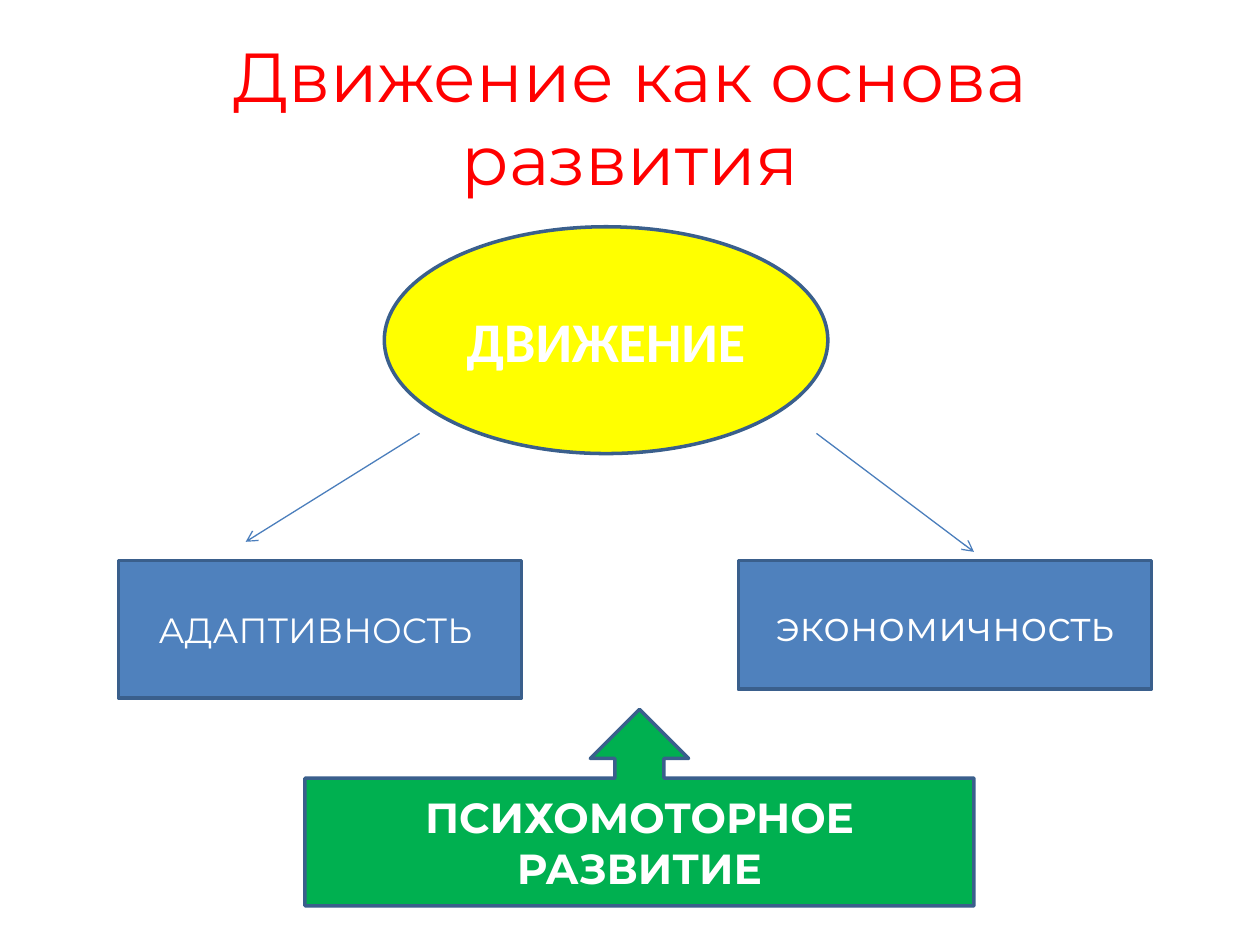
from lxml import etree
from pptx import Presentation
from pptx.dml.color import RGBColor
from pptx.enum import shapes, text
from pptx.oxml.ns import qn
from pptx.util import Inches, Pt

RED = RGBColor(0xFF, 0x00, 0x00)
YELLOW = RGBColor(0xFF, 0xFF, 0x00)
BLUE = RGBColor(0x4F, 0x81, 0xBD)
GREEN = RGBColor(0x00, 0xB0, 0x50)
WHITE = RGBColor(0xFF, 0xFF, 0xFF)
OUTLINE = RGBColor(0x3A, 0x5F, 0x8C)
ARROW = RGBColor(0x4B, 0x7E, 0xBC)
FONT = "Montserrat"
KIND = shapes.MSO_SHAPE


def write(sp, words, size, color, font=FONT, bold=False):
    tf = sp.text_frame
    tf.word_wrap = True
    tf.auto_size = text.MSO_AUTO_SIZE.NONE
    tf.vertical_anchor = text.MSO_ANCHOR.MIDDLE
    p = tf.paragraphs[0]
    p.alignment = text.PP_ALIGN.CENTER
    r = p.add_run()
    r.text = words
    r.font.size = Pt(size)
    r.font.name = font
    r.font.bold = bold
    r.font.color.rgb = color


def add_title(s, words):
    sp = s.shapes.title
    sp.left, sp.top = Inches(0.5), Inches(0.3)
    sp.width, sp.height = Inches(9), Inches(1.25)
    write(sp, words, 39.6, RED)


def add_block(s, kind, box, fill, words, size, **style):
    sp = s.shapes.add_shape(kind, *map(Inches, box))
    sp.shadow.inherit = False
    sp.fill.solid()
    sp.fill.fore_color.rgb = fill
    sp.line.color.rgb = OUTLINE
    sp.line.width = Pt(2)
    write(sp, words, size, WHITE, **style)


def add_arrow(s, start, end):
    line = s.shapes.add_connector(
        shapes.MSO_CONNECTOR.STRAIGHT, *map(Inches, start + end))
    line.line.color.rgb = ARROW
    line.line.width = Pt(0.75)
    etree.SubElement(line.line._get_or_add_ln(), qn("a:tailEnd"), type="arrow")
    etree.SubElement(line._element.spPr, qn("a:effectLst"))


def main():
    prs = Presentation()
    prs.slide_width, prs.slide_height = Inches(10), Inches(7.5)
    s = prs.slides.add_slide(prs.slide_layouts[5])
    add_title(s, "Движение как основа развития")
    add_block(s, KIND.OVAL, (3.05, 1.8, 3.52, 1.8), YELLOW,
              "ДВИЖЕНИЕ", 32, font="Calibri", bold=True)
    add_arrow(s, (6.48, 3.44), (7.73, 4.38))
    add_arrow(s, (3.33, 3.44), (1.95, 4.3))
    add_block(s, KIND.RECTANGLE, (0.94, 4.45, 3.2, 1.09), BLUE,
              "АДАПТИВНОСТЬ ", 20)
    add_block(s, KIND.RECTANGLE, (5.86, 4.45, 3.28, 1.02), BLUE,
              "экономичность", 24)
    add_block(s, KIND.UP_ARROW_CALLOUT, (2.42, 5.63, 5.31, 1.56), GREEN,
              "ПСИХОМОТОРНОЕ РАЗВИТИЕ", 24, bold=True)
    prs.save("out.pptx")


if __name__ == "__main__":
    main()
